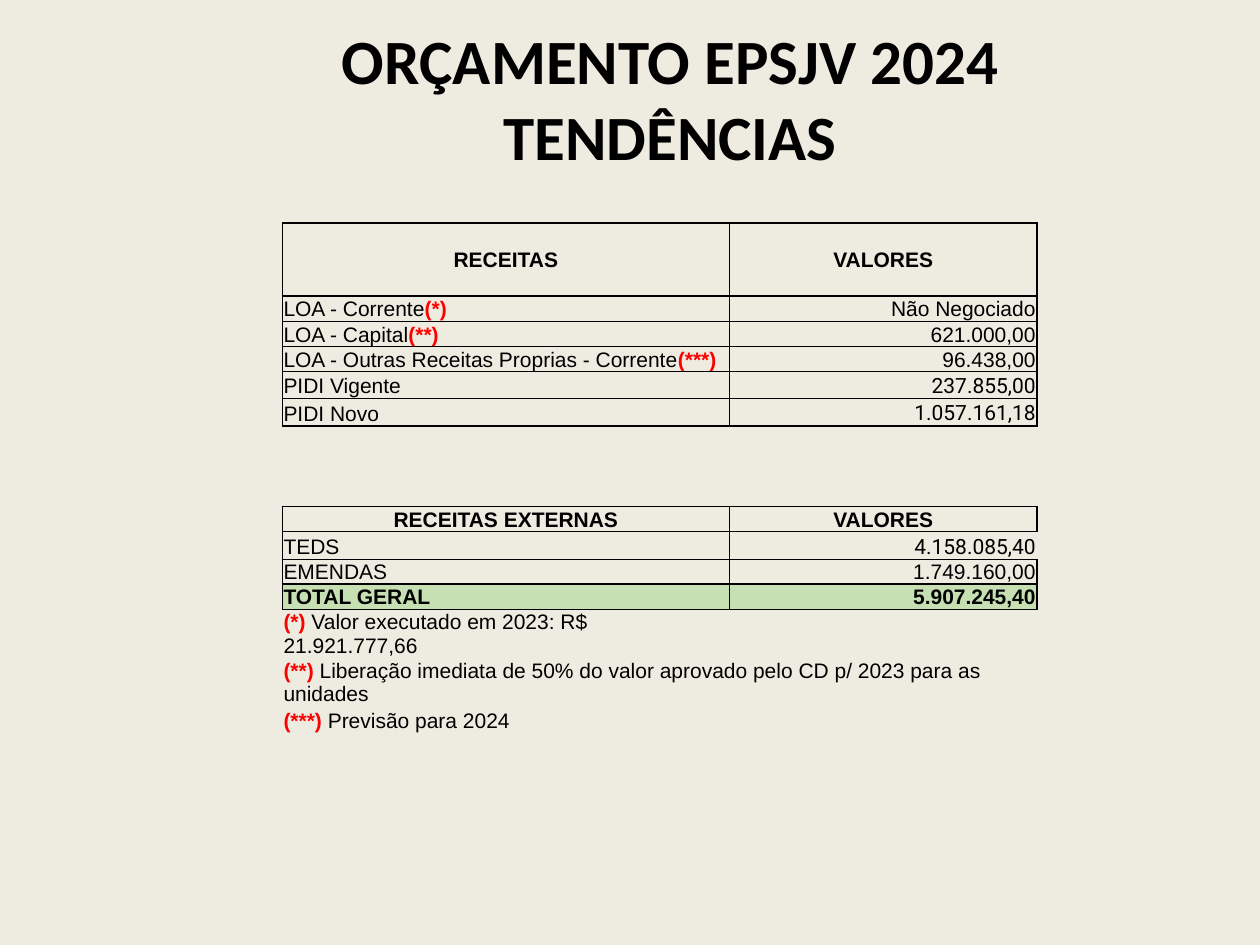
from dataclasses import dataclass

import pptx
import pptx.dml.color
import pptx.enum.text
import pptx.oxml
import pptx.oxml.ns
import pptx.util
from pptx.util import Inches

BLACK, RED, GREEN, CREAM = "000000", "FF0000", "C6E0B4", "EEECE1"
ALIGN = pptx.enum.text.PP_ALIGN
ANCHOR = pptx.enum.text.MSO_ANCHOR
NO_STYLE = "{2D5ABB26-0587-4C30-8999-92F81FD0307C}"
THIN, THICK = 0.5, 1


@dataclass
class Row:
    height: float
    label: str = ""
    value: str = ""
    mark: str = ""
    kind: str = "item"  # header, item, total, note or gap
    value_font: str = "Arial"


ROWS = [
    Row(0.58, "RECEITAS", "VALORES", kind="header"),
    Row(0.2, "LOA - Corrente", "Não Negociado", "(*)"),
    Row(0.2, "LOA - Capital", "621.000,00", "(**)"),
    Row(0.2, "LOA - Outras Receitas Proprias - Corrente", "96.438,00", "(***)"),
    Row(0.21, "PIDI Vigente", "237.855,00", value_font="Roboto"),
    Row(0.22, "PIDI Novo", "1.057.161,18", value_font="Roboto"),
    Row(0.19, kind="gap"),
    Row(0.19, kind="gap"),
    Row(0.2, kind="gap"),
    Row(0.2, "RECEITAS EXTERNAS", "VALORES", kind="header"),
    Row(0.22, "TEDS", "4.158.085,40", value_font="Roboto"),
    Row(0.19, "EMENDAS", "1.749.160,00"),
    Row(0.2, "TOTAL GERAL", "5.907.245,40", kind="total"),
    Row(0.38, " Valor executado em 2023: R$ 21.921.777,66", mark="(*)", kind="note"),
    Row(0.38, " Liberação imediata de 50% do valor aprovado pelo CD p/ 2023 para as unidades",
        mark="(**)", kind="note"),
    Row(0.19, " Previsão para 2024", mark="(***)", kind="note"),
]
COLUMN_WIDTHS = (3.55, 2.44)


def rgb(color: str) -> pptx.dml.color.RGBColor:
    return pptx.dml.color.RGBColor.from_string(color)


def add_text(paragraph, text: str, *, size: float = 12, font: str = "Arial",
             color: str = BLACK, bold: bool = False) -> None:
    run = paragraph.add_run()
    run.text = text
    run.font.size = pptx.util.Pt(size)
    run.font.name = font
    run.font.bold = bold
    run.font.color.rgb = rgb(color)


def set_borders(cell, **widths: float) -> None:
    """Draw the given sides (L, R, T, B) in black, ahead of the cell's fill."""
    properties = cell._tc.get_or_add_tcPr()
    sides = [side for side in "LRTB" if widths.get(side)]
    for position, side in enumerate(sides):
        properties.insert(position, pptx.oxml.parse_xml(
            f'<a:ln{side} {pptx.oxml.ns.nsdecls("a")} w="{pptx.util.Pt(widths[side])}">'
            f'<a:solidFill><a:srgbClr val="{BLACK}"/></a:solidFill></a:ln{side}>'))


def prepare_cell(cell, row: Row) -> None:
    cell.margin_left = cell.margin_right = cell.margin_top = Inches(0.01)
    cell.margin_bottom = 0
    cell.vertical_anchor = ANCHOR.MIDDLE if row.kind == "header" else ANCHOR.BOTTOM
    if row.kind == "total":
        cell.fill.solid()
        cell.fill.fore_color.rgb = rgb(GREEN)
    else:
        cell.fill.background()
    # Empty cells take their line height from the paragraph end
    end = cell.text_frame.paragraphs[0]._p.get_or_add_endParaRPr()
    end.set("sz", "1200")


def fill_row(cells, row: Row) -> None:
    for cell in cells:
        prepare_cell(cell, row)
    label, value = (cell.text_frame.paragraphs[0] for cell in cells)
    bold = row.kind in ("header", "total")
    label.alignment = ALIGN.CENTER if row.kind == "header" else ALIGN.LEFT
    value.alignment = ALIGN.CENTER if row.kind == "header" else ALIGN.RIGHT

    parts = [(row.label, BLACK, bold), (row.mark, RED, True)]
    if row.kind == "note":
        parts.reverse()
    for text, color, heavy in parts:
        if text:
            add_text(label, text, color=color, bold=heavy)
    if row.value:
        add_text(value, row.value, font=row.value_font, bold=bold)


def frame_row(cells, index: int) -> None:
    """Thick outline and header rules, thin lines between items."""
    row = ROWS[index]
    if not row.value:
        return
    above, below = ROWS[index - 1], ROWS[index + 1]
    top = THIN if row.kind == above.kind == "item" else THICK
    bottom = THIN if row.kind == below.kind == "item" else THICK
    set_borders(cells[0], L=THICK, R=THIN, T=top, B=bottom)
    set_borders(cells[1], L=THIN, R=0 if row.label == "TEDS" else THICK, T=top, B=bottom)


def add_budget_table(slide) -> None:
    frame = slide.shapes.add_table(
        len(ROWS), len(COLUMN_WIDTHS), Inches(2.24), Inches(1.77),
        Inches(sum(COLUMN_WIDTHS)), Inches(sum(row.height for row in ROWS)))
    budget = frame.table
    budget.first_row = budget.horz_banding = False
    budget._tbl.tblPr.find(pptx.oxml.ns.qn("a:tableStyleId")).text = NO_STYLE
    for column, width in zip(budget.columns, COLUMN_WIDTHS):
        column.width = Inches(width)
    for index, row in enumerate(ROWS):
        budget.rows[index].height = Inches(row.height)
        cells = [budget.cell(index, column) for column in range(len(COLUMN_WIDTHS))]
        fill_row(cells, row)
        frame_row(cells, index)
    # The first note breaks before its amount; the second spans both columns
    first_note = len(ROWS) - 3
    budget.cell(first_note, 0).margin_right = Inches(0.6)
    budget.cell(first_note + 1, 0).merge(budget.cell(first_note + 1, 1))


def add_title(slide) -> None:
    title = slide.shapes.title
    title.left, title.top = Inches(0.91), Inches(0.13)
    title.width, title.height = Inches(8.82), Inches(0.63)
    text = title.text_frame
    text.word_wrap = True
    text.auto_size = pptx.enum.text.MSO_AUTO_SIZE.NONE
    text.vertical_anchor = ANCHOR.TOP
    text.margin_left = text.margin_right = Inches(0.07)
    text.margin_top = text.margin_bottom = Inches(0.04)
    heading = text.paragraphs[0]
    heading.alignment = ALIGN.CENTER
    for position, line in enumerate(("ORÇAMENTO EPSJV 2024", "TENDÊNCIAS")):
        if position:
            heading.add_line_break()
        add_text(heading, line, size=36, font="Calibri", bold=True)


def main() -> None:
    deck = pptx.Presentation()
    deck.slide_width, deck.slide_height = Inches(10), Inches(7.5)
    slide = deck.slides.add_slide(deck.slide_layouts[5])
    slide.background.fill.solid()
    slide.background.fill.fore_color.rgb = rgb(CREAM)
    add_title(slide)
    add_budget_table(slide)
    deck.save("out.pptx")


if __name__ == "__main__":
    main()
